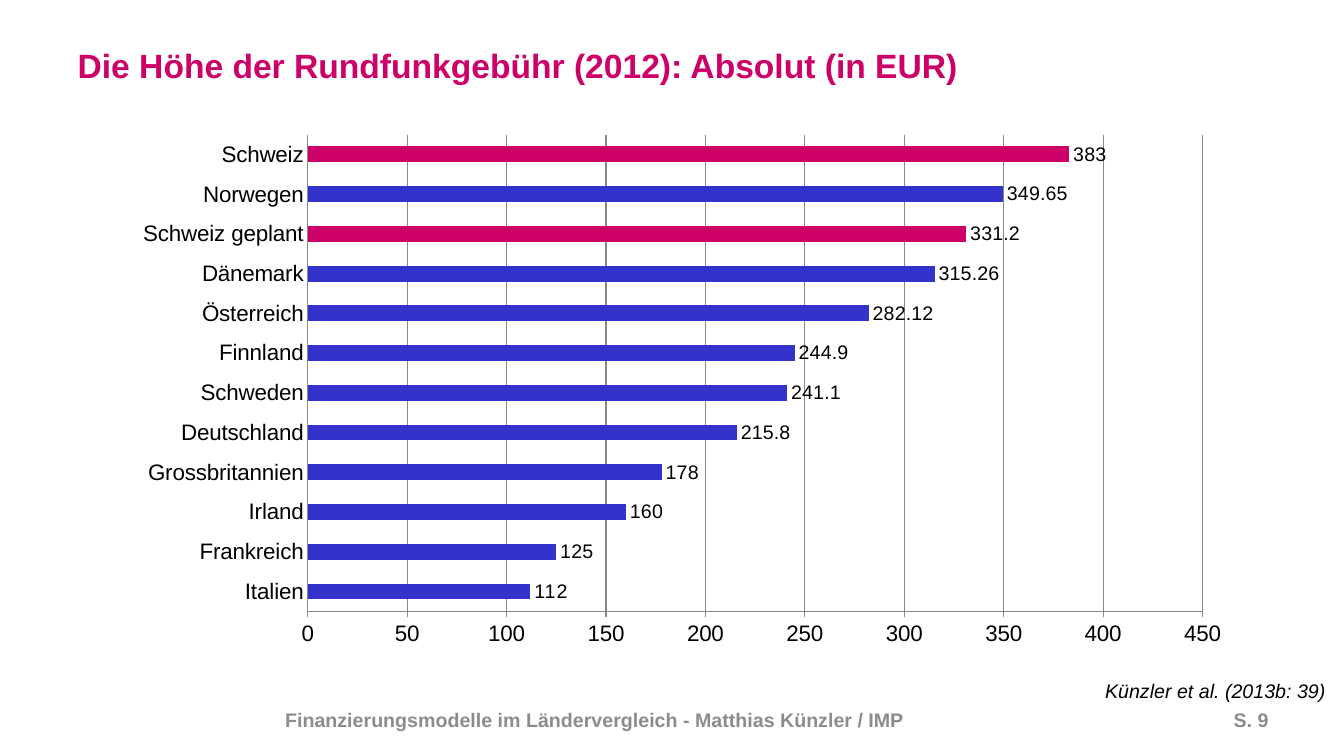
from lxml import etree
from pptx import Presentation
from pptx.chart.data import CategoryChartData
from pptx.dml.color import RGBColor
from pptx.enum.chart import XL_CHART_TYPE as ChartType, XL_LABEL_POSITION as LabelPosition
from pptx.enum.chart import XL_TICK_MARK as TickMark
from pptx.enum.text import MSO_ANCHOR as Anchor, MSO_AUTO_SIZE as AutoSize, PP_ALIGN as Align
from pptx.oxml import parse_xml
from pptx.oxml.ns import nsdecls, qn
from pptx.util import Inches, Pt

# Content
TITLE = "Die Höhe der Rundfunkgebühr (2012): Absolut (in EUR)"
SOURCE = "Künzler et al. (2013b: 39)"
FOOTER = "Finanzierungsmodelle im Ländervergleich - Matthias Künzler / IMP"
PAGE = "S. 9"
FEES = {
    "Italien": 112,
    "Frankreich": 125,
    "Irland": 160,
    "Grossbritannien": 178,
    "Deutschland": 215.8,
    "Schweden": 241.1,
    "Finnland": 244.9,
    "Österreich": 282.12,
    "Dänemark": 315.26,
    "Schweiz geplant": 331.2,
    "Norwegen": 349.65,
    "Schweiz": 383,
}
PINK, BLUE, GREY, BLACK, WHITE = "CC0066", "3333CC", "8C8C8C", "000000", "FFFFFF"
LINE = "888888"
PLOT_LAYOUT = {"x": 0.167, "y": 0.02, "w": 0.796, "h": 0.896}


def color(value):
    return RGBColor.from_string(value)


def style_font(font, size, value, bold=False, italic=False):
    font.name, font.size = "Arial", Pt(size)
    font.bold, font.italic = bold, italic
    font.color.rgb = color(value)


def style_line(line):
    line.color.rgb = color(LINE)
    line.width = Pt(0.75)


def write(shape, box, text, size, value, align=Align.LEFT, bold=False, italic=False):
    shape.left, shape.top, shape.width, shape.height = (Inches(n) for n in box)
    frame = shape.text_frame
    frame.text = text
    frame.word_wrap = True
    frame.auto_size = AutoSize.NONE
    frame.vertical_anchor = Anchor.MIDDLE
    paragraph = frame.paragraphs[0]
    paragraph.alignment = align
    paragraph.space_before = Pt(0)
    style_font(paragraph.font, size, value, bold, italic)
    return paragraph


presentation = Presentation()
presentation.slide_width, presentation.slide_height = Inches(13.33), Inches(7.5)
slide = presentation.slides.add_slide(presentation.slide_layouts[1])

# Title
write(slide.shapes.title, (0.67, 0.3, 12, 0.69), TITLE, 24, PINK, bold=True)

# Footer and page number
for box, text, align in (
    ((2.73, 6.9, 8.03, 0.47), FOOTER, Align.LEFT),
    ((11.39, 6.9, 1.29, 0.47), PAGE, Align.RIGHT),
):
    textbox = slide.shapes.add_textbox(0, 0, 0, 0)
    write(textbox, box, text, 14, GREY, align, bold=True)

# Source note in the body placeholder, without a bullet
note = slide.placeholders[1]
note.fill.solid()
note.fill.fore_color.rgb = color(WHITE)
paragraph = write(note, (10.86, 6.66, 2.48, 0.39), SOURCE, 14, BLACK, italic=True)
properties = paragraph._p.get_or_add_pPr()
properties.set("marL", "0")
properties.set("indent", "0")
properties.insert_element_before(
    parse_xml(f"<a:buNone {nsdecls('a')}/>"), "a:tabLst", "a:defRPr", "a:extLst")

# Bar chart
data = CategoryChartData()
data.categories = list(FEES)
data.add_series("Rundfunkgebühr", list(FEES.values()))
chart = slide.shapes.add_chart(
    ChartType.BAR_CLUSTERED, Inches(1.19), Inches(1.23), Inches(11.15), Inches(5.28), data).chart
chart.has_title = chart.has_legend = False
style_font(chart.font, 10, BLACK)

# Axes
for axis in (chart.category_axis, chart.value_axis):
    style_font(axis.tick_labels.font, 16, BLACK)
    style_line(axis.format.line)
    axis.minor_tick_mark = TickMark.NONE
chart.category_axis.major_tick_mark = TickMark.NONE
chart.category_axis.has_major_gridlines = False
value_axis = chart.value_axis
value_axis.major_tick_mark = TickMark.OUTSIDE
value_axis.minimum_scale, value_axis.maximum_scale, value_axis.major_unit = 0, 450, 50
value_axis.has_major_gridlines = True
style_line(value_axis.major_gridlines.format.line)

# Bars, with Switzerland highlighted
plot = chart.plots[0]
plot.gap_width = 150
plot.vary_by_categories = False
series = plot.series[0]
series.format.fill.solid()
series.format.fill.fore_color.rgb = color(BLUE)
for index, country in enumerate(FEES):
    if country.startswith("Schweiz"):
        fill = series.points[index].format.fill
        fill.solid()
        fill.fore_color.rgb = color(PINK)

# Value labels
labels = series.data_labels
labels.show_value = True
labels.position = LabelPosition.OUTSIDE_END
style_font(labels.font, 14, BLACK)

# Fixed plot area
plot_area = chart._chartSpace.chart.plotArea
layout = plot_area.find(qn("c:layout"))
if layout is None:
    layout = etree.Element(qn("c:layout"))
    plot_area.insert(0, layout)
manual = etree.SubElement(layout, qn("c:manualLayout"))
settings = {"layoutTarget": "inner", "xMode": "edge", "yMode": "edge", **PLOT_LAYOUT}
for name, value in settings.items():
    etree.SubElement(manual, qn(f"c:{name}")).set("val", str(value))

presentation.save("out.pptx")
